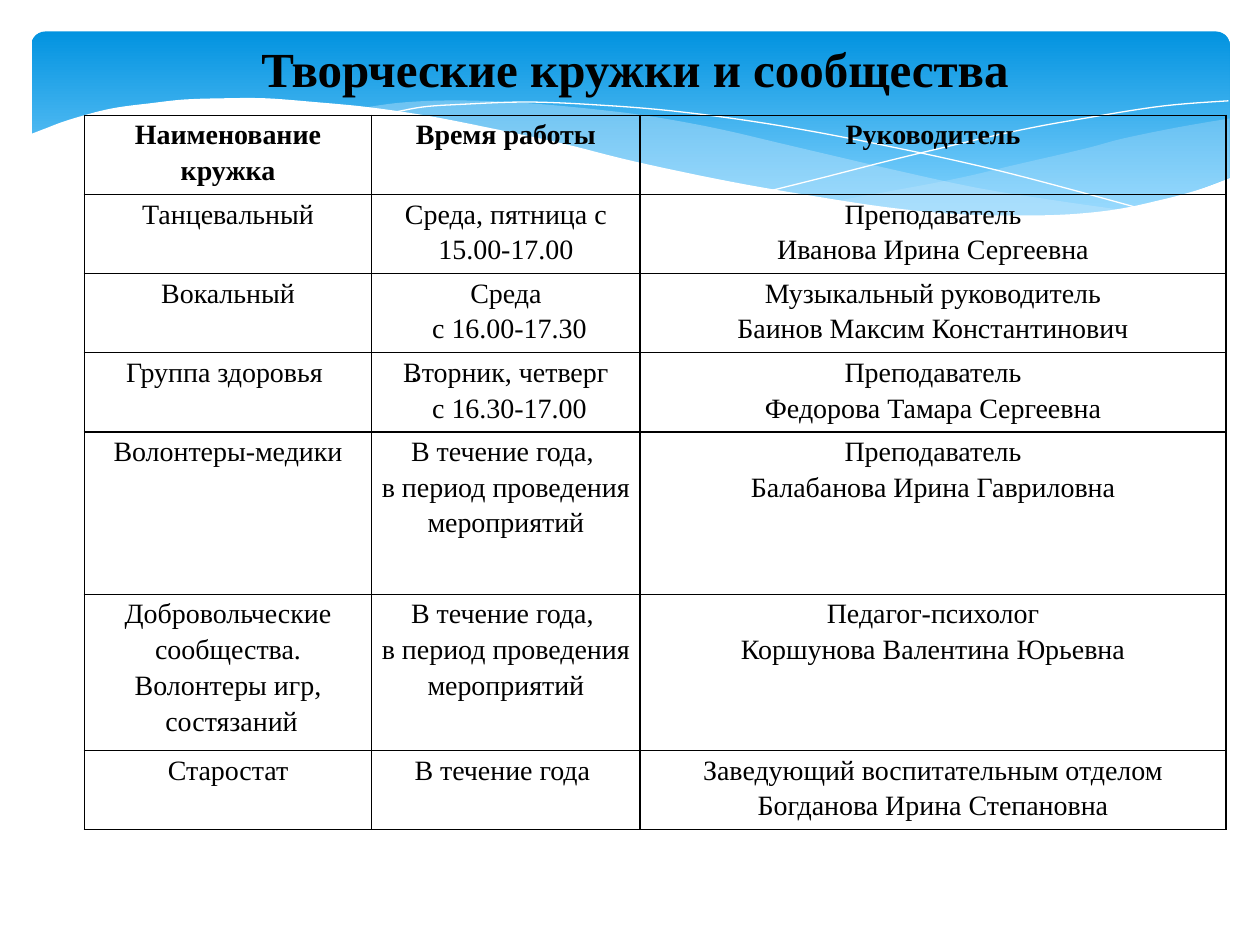
from lxml import etree
from pptx import Presentation
from pptx.dml.color import RGBColor
from pptx.enum.shapes import MSO_SHAPE as Preset
from pptx.enum.text import MSO_ANCHOR as Anchor, PP_ALIGN as Align
from pptx.oxml import parse_xml
from pptx.oxml.ns import nsdecls, qn
from pptx.util import Inches, Pt

WIDTH, HEIGHT = Inches(10), Inches(7.5)
COLUMN, ROW = WIDTH / 100, HEIGHT / 75
FONT = "Times New Roman"
BLACK, WHITE, PALE = "000000", "FFFFFF", "C6E7FC"
CURVE_STEPS = 6

RIGHT_WAVE = [
    [(97.6, 9.4), (93.5, 10.1), (89.1, 11.0), (86.1, 11.8), (80.5, 13.1), (75.3, 14.3), (66.1, 16)],
    [(66.1, 16), (70.5, 16.5), (75.7, 17), (80.3, 17.2), (85.4, 17), (89.7, 16.5),
     (93.5, 15.6), (97.6, 14.1)],
]
MIDDLE_WAVE = [
    [(89.3, 16.7), (83.7, 15.9), (77.5, 14.9), (70.6, 13.4), (62.9, 11.6), (56.9, 10.2),
     (51.4, 9.2), (46.5, 8.6), (42, 8.2), (38, 8), (34.4, 8), (31.3, 8.2), (28.6, 8.6)],
    [(28.6, 8.6), (34.2, 9.4), (40.4, 10.6), (44.9, 11.6), (53, 13.5), (60.1, 15), (66.5, 16.1),
     (72.2, 16.8), (77.3, 17.2), (81.8, 17.3), (85.7, 17.1), (89.3, 16.7)],
]
FALLING_LINE = [
    [(30.9, 9), (33.5, 8.5), (36.3, 8.3), (41.6, 8.1), (46.9, 8.3), (53.3, 8.8), (60.8, 9.8),
     (69.5, 11.4), (79.5, 13.6), (90.7, 16.6)],
]
RISING_LINE = [
    [(61.3, 15.1), (65.3, 14.1), (72, 12.4), (80.6, 10.4), (86.6, 9.3), (92.4, 8.4), (97.5, 8)],
]
WHITE_WAVE = [
    [(97.7, 14.1), (95, 15.1), (92, 15.9), (88.7, 16.6), (85, 17), (80.9, 17.1), (76.1, 17),
     (70.8, 16.5), (64.8, 15.6), (57.9, 14.4), (50.3, 12.8), (44.7, 11.4), (39.1, 10.2),
     (34, 9.2), (29.2, 8.5), (25, 8.1), (21.1, 7.8), (17.7, 7.8), (14.6, 7.9), (11.9, 8.2),
     (9.5, 8.5), (7.6, 8.9), (5.2, 9.6), (3.6, 10.2), (2.3, 10.7)],
    [(2.3, 22.4), (97.7, 22.4)],
]

HEADINGS = ["Наименование кружка", "Время работы", "Руководитель"]
CLUBS = [
    ["Танцевальный", "Среда, пятница с 15.00-17.00", "Преподаватель\nИванова Ирина Сергеевна"],
    ["Вокальный", "Среда\n с 16.00-17.30",
     "Музыкальный руководитель\nБаинов Максим Константинович"],
    ["Группа здоровья ", "Вторник, четверг\n с 16.30-17.00",
     "Преподаватель\nФедорова Тамара Сергеевна"],
    ["Волонтеры-медики", "В течение года, \nв период проведения мероприятий",
     "Преподаватель\nБалабанова Ирина Гавриловна"],
    ["Добровольческие сообщества. Волонтеры игр,\n состязаний",
     "В течение года, \nв период проведения мероприятий",
     "Педагог-психолог\nКоршунова Валентина Юрьевна"],
    ["Старостат", "В течение года ",
     "Заведующий воспитательным отделом\nБогданова Ирина Степановна"],
]
COLUMN_WIDTHS = [22.8, 21.3, 46.5]
ROW_HEIGHTS = [6.28] * 4 + [12.9, 12.4, 6.28]


def color(value):
    """Turn a hex string into a colour."""
    return RGBColor.from_string(value)


def box(left, top, width, height):
    """Turn grid columns and rows into a position and a size."""
    return [round(left * COLUMN), round(top * ROW), round(width * COLUMN), round(height * ROW)]


def write_text(frame, text, size=16, bold=False, align=Align.CENTER, spacing=1.0):
    """Write each line of the text as one formatted paragraph."""
    for index, line in enumerate(text.split("\n")):
        paragraph = frame.add_paragraph() if index else frame.paragraphs[0]
        paragraph.alignment, paragraph.line_spacing = align, spacing
        run = paragraph.add_run()
        run.text = line
        run.font.name, run.font.size, run.font.bold = FONT, Pt(size), bold
        run.font.color.rgb = color(BLACK)


def add_text(slide, place, text, wrap=True, **text_format):
    """Add a text box."""
    frame = slide.shapes.add_textbox(*box(*place)).text_frame
    frame.word_wrap, frame.vertical_anchor = wrap, Anchor.TOP
    write_text(frame, text, **text_format)


def add_banner(slide):
    """Add the rounded gradient band behind the title."""
    shape = slide.shapes.add_shape(Preset.ROUNDED_RECTANGLE, *box(2.5, 2.5, 95.1, 15.6))
    shape.shadow.inherit = False
    shape.adjustments[0] = 0.07
    shape.line.fill.background()
    shape.fill.gradient()
    shape.fill.gradient_angle = 270
    for stop, position, value in zip(shape.fill.gradient_stops, (0, 0.9), ("0293E0", "83D3FE")):
        stop.position, stop.color.rgb = position, color(value)


def smooth(points):
    """Return a Catmull-Rom curve through the points."""
    if len(points) < 3:
        return points
    padded = [points[0], *points, points[-1]]
    curve = [points[0]]
    for a, b, c, d in zip(padded, padded[1:], padded[2:], padded[3:]):
        for step in range(1, CURVE_STEPS + 1):
            t = step / CURVE_STEPS
            curve.append(tuple(
                (2 * q + (r - p) * t + (2 * p - 5 * q + 4 * r - s) * t ** 2
                 + (3 * q - p - 3 * r + s) * t ** 3) / 2
                for p, q, r, s in zip(a, b, c, d)))
    return curve


def add_curve(slide, curves, fill=None, opacity=100, line=None):
    """Add an outline made of smooth curves, closed when it has a fill."""
    points = [(round(x * COLUMN), round(y * ROW)) for curve in curves for x, y in smooth(curve)]
    builder = slide.shapes.build_freeform(*points[0])
    builder.add_line_segments(points[1:], close=fill is not None)
    shape = builder.convert_to_shape()
    shape.shadow.inherit = False
    if fill:
        shape.fill.solid()
        shape.fill.fore_color.rgb = color(fill)
        if opacity < 100:
            value = next(shape.element.spPr.iter(qn("a:srgbClr")))
            etree.SubElement(value, qn("a:alpha")).set("val", str(opacity * 1000))
    else:
        shape.fill.background()
    if line:
        shape.line.width = Pt(0)
        shape.line.color.rgb = color(line)
    else:
        shape.line.fill.background()


def border_cell(cell):
    """Draw a thin black border on every side of a cell."""
    properties = cell._tc.get_or_add_tcPr()
    for index, side in enumerate("LRTB"):
        properties.insert(index, parse_xml(
            f'<a:ln{side} {nsdecls("a")} w="{Pt(1)}"><a:solidFill>'
            f'<a:srgbClr val="{BLACK}"/></a:solidFill></a:ln{side}>'))


def add_schedule(slide, rows):
    """Add the table of clubs."""
    place = box(6.7, 9.15, sum(COLUMN_WIDTHS), sum(ROW_HEIGHTS))
    table = slide.shapes.add_table(len(rows), len(COLUMN_WIDTHS), *place).table
    table.first_row = table.horz_banding = False
    for column, width in zip(table.columns, COLUMN_WIDTHS):
        column.width = round(width * COLUMN)
    for index, (row, height, texts) in enumerate(zip(table.rows, ROW_HEIGHTS, rows)):
        row.height = round(height * ROW)
        for cell, text in zip(row.cells, texts):
            cell.margin_left = cell.margin_right = Inches(0.04)
            cell.margin_top = cell.margin_bottom = 0
            cell.fill.background()
            border_cell(cell)
            write_text(cell.text_frame, text, bold=index == 0, spacing=1.15)


def main():
    """Build and save the slide."""
    presentation = Presentation()
    presentation.slide_width, presentation.slide_height = WIDTH, HEIGHT
    slide = presentation.slides.add_slide(presentation.slide_layouts[6])
    add_banner(slide)
    add_curve(slide, RIGHT_WAVE, fill=PALE, opacity=29)
    add_curve(slide, MIDDLE_WAVE, fill=PALE, opacity=40)
    add_curve(slide, FALLING_LINE, line=WHITE)
    add_curve(slide, RISING_LINE, line=WHITE)
    add_curve(slide, WHITE_WAVE, fill=WHITE)
    add_schedule(slide, [HEADINGS, *CLUBS])
    add_text(slide, (31.7, 28.1, 2.4, 6.1), ".", wrap=False, size=12, bold=True, align=Align.LEFT)
    add_text(slide, (6.7, 2.6, 87.4, 5.7), "Творческие кружки и сообщества", size=28, bold=True)
    presentation.save("out.pptx")


if __name__ == "__main__":
    main()
